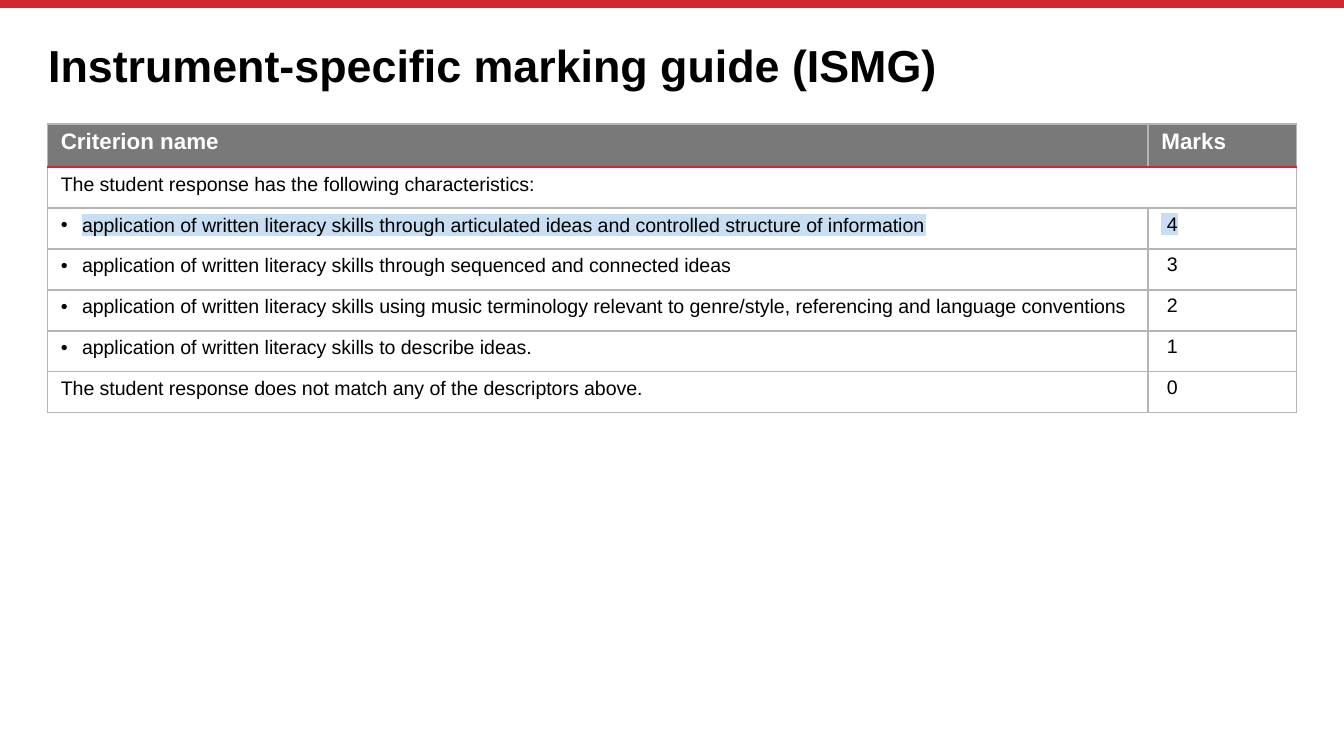
import pptx
import pptx.dml.color
import pptx.enum.shapes
import pptx.enum.text
import pptx.oxml
import pptx.oxml.ns
import pptx.util
from lxml import etree
from pptx.util import Cm, Pt

COLOURS = {
    "red": "D22730",
    "grey": "797979",
    "rule": "B5B5B5",
    "highlight": "C8DEF2",
    "black": "000000",
    "white": "FFFFFF",
}
FONT = "Arial"
HEADINGS = ("Criterion name", "Marks")
INTRO = "The student response has the following characteristics:"
DESCRIPTORS = [
    ("application of written literacy skills through articulated ideas and controlled structure of information", 4),
    ("application of written literacy skills through sequenced and connected ideas", 3),
    ("application of written literacy skills using music terminology relevant to genre/style, "
     "referencing and language conventions", 2),
    ("application of written literacy skills to describe ideas.", 1),
]
NO_MATCH = ("The student response does not match any of the descriptors above.", 0)
ACHIEVED = 4


def rgb(name):
    return pptx.dml.color.RGBColor.from_string(COLOURS[name])


def add_element(parent, tag, **attributes):
    element = etree.SubElement(parent, pptx.oxml.ns.qn(tag))
    for key, value in attributes.items():
        element.set(key, str(value))
    return element


def style_paragraph(paragraph, size, colour, bold=False):
    for run in paragraph.runs:
        run.font.name = FONT
        run.font.size = Pt(size)
        run.font.bold = bold
        run.font.color.rgb = rgb(colour)


def highlight(paragraph):
    for run in paragraph.runs:
        properties = run.font._element
        mark = add_element(properties, "a:highlight")
        add_element(mark, "a:srgbClr", val=COLOURS["highlight"])
        properties.find(pptx.oxml.ns.qn("a:latin")).addprevious(mark)


def add_bullet(paragraph):
    properties = paragraph._p.get_or_add_pPr()
    properties.set("marL", str(Cm(0.4)))
    properties.set("indent", str(-Cm(0.4)))
    add_element(properties, "a:buFont", typeface=FONT)
    add_element(properties, "a:buChar", char="•")


def set_borders(cell, top, bottom):
    properties = cell._tc.get_or_add_tcPr()
    sides = {"L": "rule", "R": "rule", "T": top, "B": bottom}
    for index, (side, colour) in enumerate(sides.items()):
        width = Pt(1.5) if colour == "red" else Pt(1)
        border = add_element(properties, f"a:ln{side}", w=width)
        fill = add_element(border, "a:solidFill")
        add_element(fill, "a:srgbClr", val=COLOURS[colour])
        properties.insert(index, border)


def fill_cell(cell, text, size=10.5, colour="black", bold=False):
    cell.margin_left = cell.margin_right = Cm(0.25)
    cell.margin_top = cell.margin_bottom = Cm(0.1)
    cell.text_frame.text = text
    paragraph = cell.text_frame.paragraphs[0]
    style_paragraph(paragraph, size, colour, bold)
    return paragraph


def fill_descriptor(cell, text, bulleted):
    paragraph = fill_cell(cell, text)
    paragraph.line_spacing = 1.05
    paragraph.space_after = Pt(2)
    if bulleted:
        add_bullet(paragraph)
    return paragraph


def add_top_band(slide, left, top, width):
    band = slide.shapes.add_connector(
        pptx.enum.shapes.MSO_CONNECTOR.STRAIGHT, left, top, left + width, top)
    band.line.color.rgb = rgb("red")
    band.line.width = Pt(4.2)
    add_element(band._element.spPr, "a:effectLst")


def add_title(slide, left, top, width, height):
    title = slide.shapes.add_textbox(left, top, width, height).text_frame
    title.word_wrap = True
    title.margin_left = title.margin_right = title.margin_top = title.margin_bottom = 0
    title.vertical_anchor = pptx.enum.text.MSO_ANCHOR.BOTTOM
    title.text = "Instrument-specific marking guide (ISMG)"
    title.paragraphs[0].line_spacing = 0.9
    style_paragraph(title.paragraphs[0], 24, "black", bold=True)


def add_marking_guide(slide, left, top, width, height):
    scored = DESCRIPTORS + [NO_MATCH]
    row_count = len(scored) + 2
    guide = slide.shapes.add_table(row_count, 2, left, top, width, height).table
    marks_width = Cm(2.8)
    guide.columns[0].width = width - marks_width
    guide.columns[1].width = marks_width
    header_height = Cm(0.82)
    guide.rows[0].height = header_height
    for index in range(1, row_count):
        guide.rows[index].height = (height - header_height) // (row_count - 1)

    for column, heading in enumerate(HEADINGS):
        fill_cell(guide.cell(0, column), heading, 12, "white", bold=True)
    guide.cell(1, 0).merge(guide.cell(1, 1))
    fill_descriptor(guide.cell(1, 0), INTRO, bulleted=False)
    for row, (descriptor, mark) in enumerate(scored, start=2):
        paragraphs = (
            fill_descriptor(guide.cell(row, 0), descriptor, bulleted=mark > 0),
            fill_cell(guide.cell(row, 1), f" {mark}"),
        )
        if mark == ACHIEVED:
            for paragraph in paragraphs:
                highlight(paragraph)

    for row in range(row_count):
        for column in range(2):
            cell = guide.cell(row, column)
            if row == 0:
                cell.fill.solid()
                cell.fill.fore_color.rgb = rgb("grey")
            else:
                cell.fill.background()
            set_borders(cell, top="red" if row == 1 else "rule",
                        bottom="red" if row == 0 else "rule")


def main():
    presentation = pptx.Presentation()
    presentation.slide_width = Cm(25.4)
    presentation.slide_height = Cm(14.29)
    slide = presentation.slides.add_slide(presentation.slide_layouts[6])
    add_top_band(slide, 0, Cm(0.08), presentation.slide_width)
    add_title(slide, Cm(0.91), Cm(0.76), Cm(23.6), Cm(0.99))
    add_marking_guide(slide, Cm(0.9), Cm(2.34), Cm(23.6), Cm(5.46))
    presentation.save("out.pptx")


if __name__ == "__main__":
    main()
